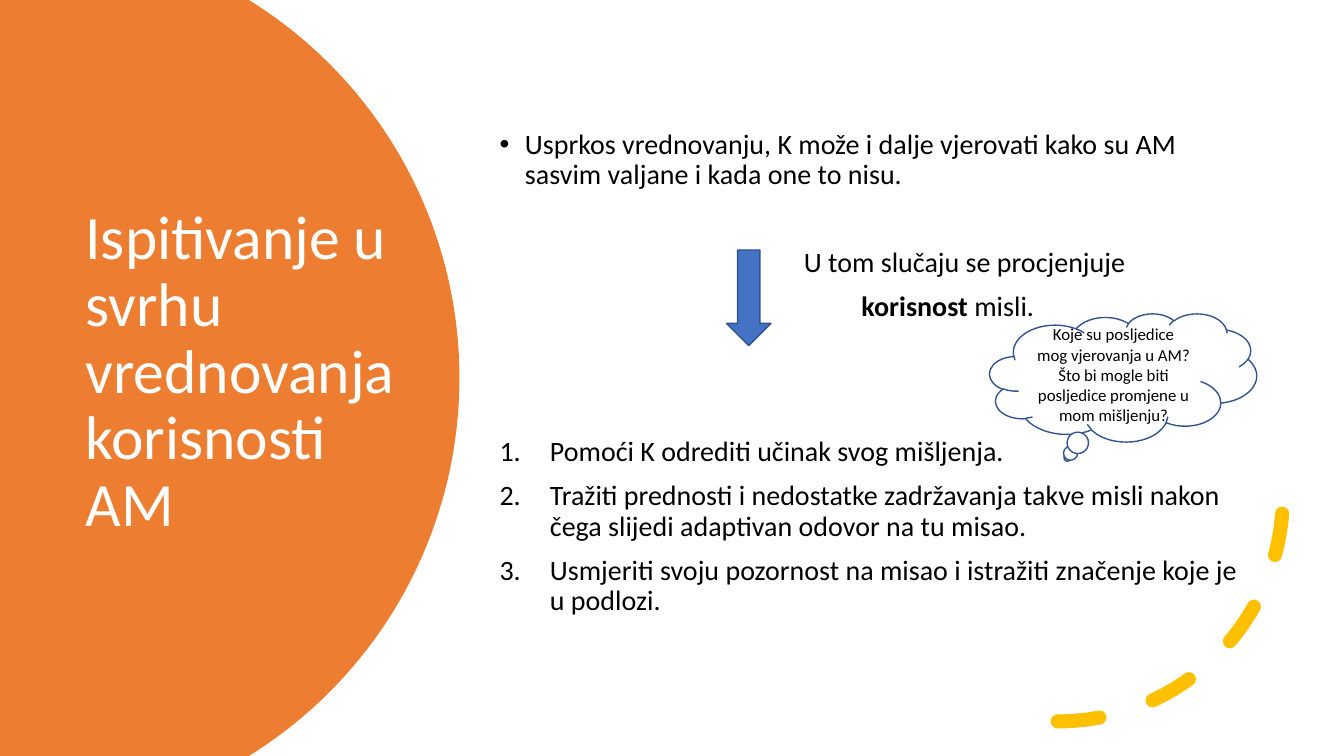
from math import asin, cos, sin

from lxml import etree
from pptx import Presentation
from pptx.dml.color import RGBColor
from pptx.enum.dml import MSO_LINE
from pptx.enum.shapes import MSO_SHAPE
from pptx.enum.text import MSO_ANCHOR, MSO_AUTO_SIZE, PP_ALIGN
from pptx.oxml.ns import qn
from pptx.util import Cm, Pt

MIDDLE = MSO_ANCHOR.MIDDLE
LEFT, CENTER = PP_ALIGN.LEFT, PP_ALIGN.CENTER

# Content
TITLE = "Ispitivanje u svrhu vrednovanja korisnosti AM"
BULLET = dict(margin=0.64, hanging=0.64, bullet="•")
NUMBER = dict(margin=1.27, hanging=1.27, numbered=True)
# Each paragraph: (text, bold) runs, then its format
BODY = [
    ([("Usprkos vrednovanju, K može i dalje vjerovati kako su AM sasvim "
       "valjane i kada one to nisu.", False)], BULLET),
    ([("U tom slučaju se procjenjuje", False)], dict(margin=7.67, before=41)),
    ([("korisnost ", True), ("misli.", False)], dict(margin=9.12, before=10)),
    ([("Pomoći K odrediti učinak svog mišljenja.", False)],
     dict(NUMBER, before=82)),
    ([("Tražiti prednosti i nedostatke zadržavanja takve misli nakon čega "
       "slijedi adaptivan odovor na tu misao.", False)],
     dict(NUMBER, before=10)),
    ([("Usmjeriti svoju pozornost na misao i istražiti značenje koje je "
       "u podlozi.", False)], dict(NUMBER, before=10)),
]
THOUGHTS = ["Koje su posljedice mog vjerovanja u AM?",
            "Što bi mogle biti posljedice promjene u mom mišljenju?"]

# Geometry in cm: left, top, width, height
SLIDE_W, SLIDE_H = 33.87, 19.05
TITLE_BOX = (1.9, 3.2, 8.89, 12.4)
BODY_BOX = (12.34, 1.65, 19.18, 15.52)
ARC_BOX = (20.98, 6.83, 11.35, 11.35)
ARROW_BOX = (18.31, 6.3, 1.12, 2.41)
CLOUD_BOX = (24.94, 7.9, 6.73, 3.23)
DISC_X, DISC_RADIUS, DISC_STEPS = 0.38, 11.2, 80

ORANGE, YELLOW, BLUE, NAVY = "ED7D31", "FFC000", "4472C4", "325491"
BLACK, WHITE = "000000", "FFFFFF"


def color(hex_value):
    return RGBColor.from_string(hex_value)


def cm_box(box):
    return [Cm(value) for value in box]


def write(paragraph, runs, size=20, ink=BLACK, align=LEFT, spacing=0.9,
          before=0, margin=0, hanging=0, bullet=None, numbered=False):
    props = paragraph._p.get_or_add_pPr()
    props.set("marL", str(Cm(margin)))
    props.set("indent", str(-Cm(hanging)))
    if numbered:
        etree.SubElement(props, qn("a:buFont")).set("typeface", "+mj-lt")
        etree.SubElement(props, qn("a:buAutoNum")).set("type", "arabicPeriod")
    elif bullet:
        etree.SubElement(props, qn("a:buFont")).set("typeface", "Arial")
        etree.SubElement(props, qn("a:buChar")).set("char", bullet)
    else:
        etree.SubElement(props, qn("a:buNone"))
    paragraph.alignment = align
    paragraph.line_spacing = spacing
    paragraph.space_before = Pt(before)
    for text, bold in runs:
        run = paragraph.add_run()
        run.text = text
        run.font.name = "Calibri"
        run.font.size = Pt(size)
        run.font.bold = bold
        run.font.color.rgb = color(ink)


def fill_frame(frame, paragraphs, **common):
    frame.word_wrap = True
    frame.auto_size = MSO_AUTO_SIZE.NONE
    frame.vertical_anchor = MIDDLE
    for index, (runs, style) in enumerate(paragraphs):
        paragraph = frame.add_paragraph() if index else frame.paragraphs[0]
        write(paragraph, runs, **common, **style)


def paint(shape, fill=None, line=None, width=1):
    shape.shadow.inherit = False
    if fill:
        shape.fill.solid()
        shape.fill.fore_color.rgb = color(fill)
    else:
        shape.fill.background()
    if line:
        shape.line.color.rgb = color(line)
        shape.line.width = Pt(width)
    else:
        shape.line.fill.background()


def main():
    prs = Presentation()
    prs.slide_width, prs.slide_height = Cm(SLIDE_W), Cm(SLIDE_H)
    slide = prs.slides.add_slide(prs.slide_layouts[5])
    shapes = slide.shapes

    # Orange disc, cut off by the slide's edges
    middle = SLIDE_H / 2
    half_angle = asin(middle / DISC_RADIUS)
    rim = []
    for step in range(DISC_STEPS + 1):
        angle = half_angle * (2 * step / DISC_STEPS - 1)
        rim.append((Cm(DISC_X + DISC_RADIUS * cos(angle)),
                    Cm(middle + DISC_RADIUS * sin(angle))))
    builder = shapes.build_freeform(0, 0)
    builder.add_line_segments(rim + [(0, Cm(SLIDE_H))], close=True)
    disc = builder.convert_to_shape()
    paint(disc, fill=ORANGE)

    # Title, brought in front of the disc
    title = shapes.title
    title.left, title.top, title.width, title.height = cm_box(TITLE_BOX)
    fill_frame(title.text_frame, [([(TITLE, False)], {})], size=44, ink=WHITE)
    disc._element.addnext(title._element)

    # Dashed arc in the lower right corner
    arc = shapes.add_shape(MSO_SHAPE.ARC, *cm_box(ARC_BOX))
    paint(arc, line=YELLOW, width=10)
    arc.line.dash_style = MSO_LINE.DASH
    arc.line._get_or_add_ln().set("cap", "rnd")
    arc._element.spPr.find(qn("a:xfrm")).set("flipV", "1")

    # Body text
    body = shapes.add_textbox(*cm_box(BODY_BOX))
    fill_frame(body.text_frame, BODY)

    # Arrow and thought cloud
    arrow = shapes.add_shape(MSO_SHAPE.DOWN_ARROW, *cm_box(ARROW_BOX))
    paint(arrow, fill=BLUE, line=NAVY)
    cloud = shapes.add_shape(MSO_SHAPE.CLOUD_CALLOUT, *cm_box(CLOUD_BOX))
    paint(cloud, fill=WHITE, line=NAVY)
    fill_frame(cloud.text_frame, [([(text, False)], {}) for text in THOUGHTS],
               size=12, align=CENTER, spacing=1.0)

    prs.save("out.pptx")


if __name__ == "__main__":
    main()
